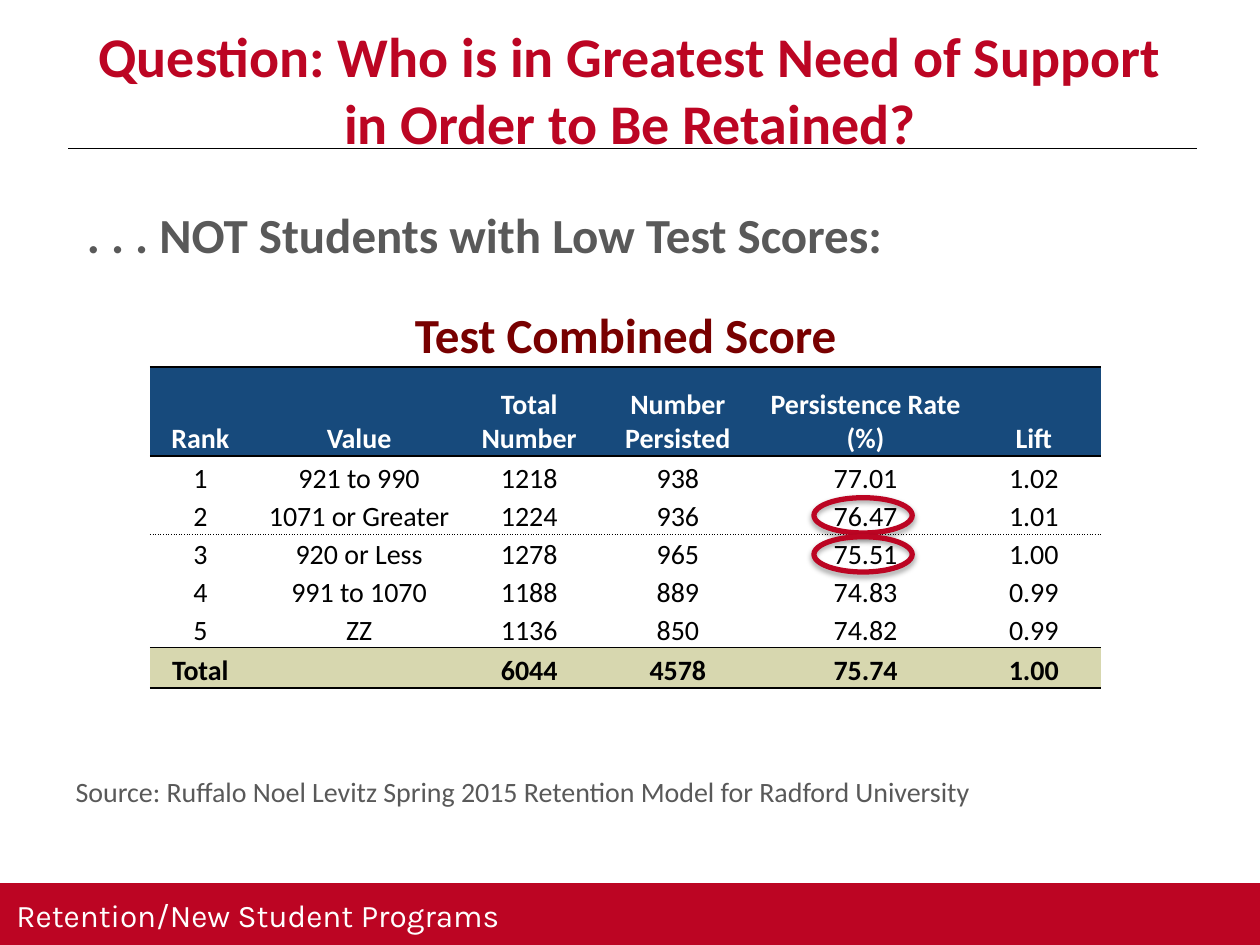
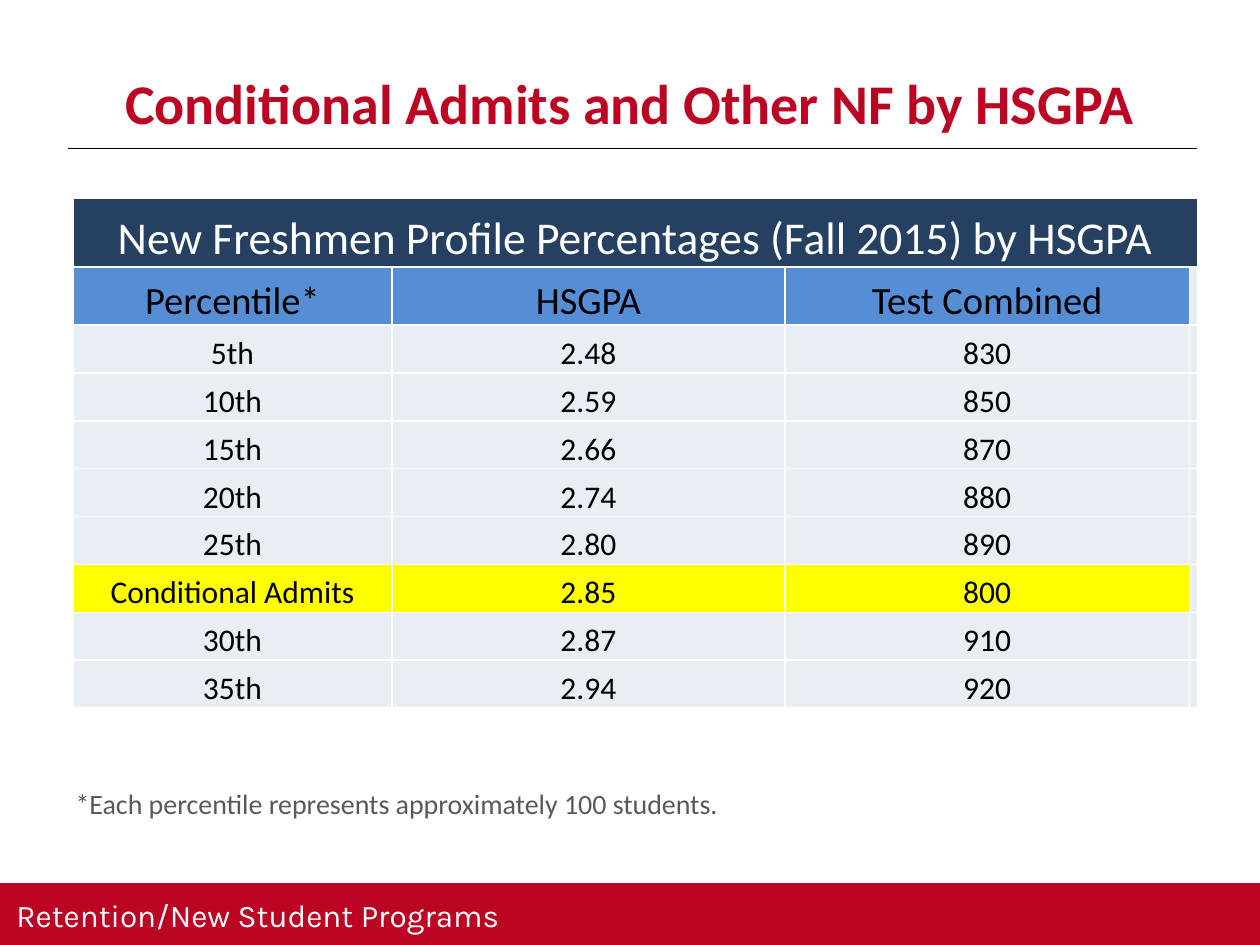
from lxml.etree import SubElement
from pptx import Presentation
from pptx.dml.color import RGBColor
from pptx.enum.shapes import MSO_CONNECTOR, MSO_SHAPE
from pptx.enum.text import MSO_ANCHOR, MSO_AUTO_SIZE, PP_ALIGN
from pptx.oxml import parse_xml
from pptx.oxml.ns import nsdecls, qn
from pptx.util import Inches, Pt

COLORS = {
    "red": "BC0523", "maroon": "780000", "gray": "595959",
    "black": "000000", "white": "FFFFFF", "navy": "174A7C",
    "olive": "D7D7AF", "midnight": "254061", "blue": "558ED5",
    "pale": "E9EDF4", "yellow": "FFFF00",
}
FONT, FOOTER_FONT = "Calibri", "Karla"
COMPARISON_LAYOUT = 4  # a title and four text placeholders
SIDES = ("L", "R", "T", "B")


def rgb(name):
    return RGBColor.from_string(COLORS[name])


class Deck:
    def __init__(self):
        self.prs = Presentation()
        self.prs.slide_width, self.prs.slide_height = Inches(10), Inches(7.5)

    def start(self, title, top):
        """Open a slide with its title, rule and footer band."""
        self.s = self.prs.slides.add_slide(self.prs.slide_layouts[COMPARISON_LAYOUT])
        self.free = [ph for ph in self.s.placeholders if ph.placeholder_format.idx]
        self.rule_and_band()
        self.fill_text(self.s.shapes.title, title, (0.5, top, 9, 1.41 - top), 32,
                       "red", bold=True, align=PP_ALIGN.CENTER, margin_top=0.07)
        self.body("Retention/New Student Programs", (0.03, 7.06, 4.05, 0.44), 18,
                  "white", font=FOOTER_FONT)

    def finish(self):
        for ph in self.free:
            ph.element.getparent().remove(ph.element)

    def rule_and_band(self):
        rule = self.s.shapes.add_connector(MSO_CONNECTOR.STRAIGHT, Inches(0.54),
                                           Inches(1.18), Inches(9.5), Inches(1.18))
        rule.line.color.rgb = rgb("black")
        rule.line.width = Pt(0.75)
        SubElement(rule.element.spPr, qn("a:effectLst"))
        band = self.s.shapes.add_shape(MSO_SHAPE.RECTANGLE, 0, Inches(7.01),
                                       Inches(10), Inches(0.49))
        band.shadow.inherit = False
        band.fill.solid()
        band.fill.fore_color.rgb = rgb("red")
        band.line.fill.background()
        # Both lie behind the placeholders
        for sp in (band, rule):
            self.s.shapes.element.insert(2, sp.element)

    def run(self, p, text, size, color, bold=False, font=FONT):
        r = p.add_run()
        r.text = text
        r.font.size, r.font.bold, r.font.name = Pt(size), bold, font
        r.font.color.rgb = rgb(color)

    def fill_text(self, sp, text, box, size, color, bold=False, font=FONT,
                  align=PP_ALIGN.LEFT, margin_left=0.1, margin_top=0.05):
        sp.left, sp.top, sp.width, sp.height = (Inches(v) for v in box)
        tf = sp.text_frame
        tf.word_wrap, tf.auto_size = True, MSO_AUTO_SIZE.NONE
        tf.vertical_anchor = MSO_ANCHOR.TOP
        tf.margin_left, tf.margin_top = Inches(margin_left), Inches(margin_top)
        p = tf.paragraphs[0]
        pPr = p._p.get_or_add_pPr()
        pPr.set("marL", "0")
        pPr.set("indent", "0")
        SubElement(pPr, qn("a:buNone"))
        p.alignment, p.space_before = align, Pt(0)
        self.run(p, text, size, color, bold, font)

    def body(self, text, box, size, color, **style):
        self.fill_text(self.free.pop(0), text, box, size, color, **style)

    def ring(self, left, top, width, height):
        sp = self.s.shapes.add_shape(MSO_SHAPE.OVAL, Inches(left), Inches(top),
                                     Inches(width), Inches(height))
        sp.fill.background()
        sp.line.color.rgb = rgb("red")
        sp.line.width = Pt(3)
        sp.shadow.inherit = False
        sp.element.spPr.find(qn("a:effectLst")).append(parse_xml(
            f'<a:outerShdw {nsdecls("a")} blurRad="{Pt(3.1)}" dist="{Pt(1.8)}" '
            f'dir="5400000" rotWithShape="0"><a:srgbClr val="{COLORS["black"]}">'
            '<a:alpha val="35000"/></a:srgbClr></a:outerShdw>'))

    def table(self, left, top, cols, heights, rows, look, margins):
        """look(row, col) gives size, colour, bold, fill and borders by side."""
        tbl = self.s.shapes.add_table(len(rows), len(cols), Inches(left), Inches(top),
                                      Inches(sum(cols)), Inches(sum(heights))).table
        tbl.first_row = tbl.horz_banding = False
        for col, width in zip(tbl.columns, cols):
            col.width = Inches(width)
        for row, height in zip(tbl.rows, heights):
            row.height = Inches(height)
        tbl.cell(0, 0).merge(tbl.cell(0, len(cols) - 1))
        for i, texts in enumerate(rows):
            for j in range(len(cols)):
                text = texts[j] if j < len(texts) else ""
                self.cell(tbl.cell(i, j), text, margins, *look(i, j))

    def cell(self, cell, text, margins, size, color, bold, fill, borders):
        (cell.margin_left, cell.margin_top,
         cell.margin_right, cell.margin_bottom) = (Inches(m) for m in margins)
        cell.vertical_anchor = MSO_ANCHOR.BOTTOM
        if fill:
            cell.fill.solid()
            cell.fill.fore_color.rgb = rgb(fill)
        else:
            cell.fill.background()
        p = cell.text_frame.paragraphs[0]
        p.alignment = PP_ALIGN.CENTER
        if text:
            self.run(p, text, size, color, bold)
        tcPr = cell._tc.get_or_add_tcPr()
        for i, side in enumerate(SIDES):
            tcPr.insert(i, self.border(side, *borders.get(side, (None, 0))))

    def border(self, side, color, width, dash="solid"):
        paint = "<a:noFill/>"
        if color:
            paint = (f'<a:solidFill><a:srgbClr val="{COLORS[color]}"/></a:solidFill>'
                     f'<a:prstDash val="{dash}"/>')
        return parse_xml(f'<a:ln{side} {nsdecls("a")} w="{Pt(width)}">{paint}</a:ln{side}>')


# Table looks
HEAVY, THIN, DOTTED = ("black", 1.5), ("black", 0.5), ("black", 0.5, "sysDot")
SCORE_LINES = [HEAVY, HEAVY, None, DOTTED, None, None, THIN, HEAVY]  # below each row


def score_look(row, col):
    borders = {}
    if SCORE_LINES[row]:
        borders["B"] = SCORE_LINES[row]
    if row and SCORE_LINES[row - 1]:
        borders["T"] = SCORE_LINES[row - 1]
    if row == 0:
        return 28, "maroon", True, None, borders
    if row == 1:
        return 16, "white", True, "navy", borders
    total = row == len(SCORE_LINES) - 1
    return 16, "black", total, "olive" if total else None, borders


def gpa_look(row, col):
    borders = dict.fromkeys(SIDES, ("white", 1))
    if row == 0:
        return 26, "white", False, "midnight", borders
    fill = "pale"
    if col < 3:
        fill = {1: "blue", 7: "yellow"}.get(row, "pale")
    return 22 if row == 1 else 18, "black", False, fill, borders


SCORE_ROWS = [
    ["Test Combined Score"],
    ["Rank", "Value", "Total Number", "Number Persisted", "Persistence Rate (%)", "Lift"],
    ["1", "921 to 990", "1218", "938", "77.01", "1.02"],
    ["2", "1071 or Greater", "1224", "936", "76.47", "1.01"],
    ["3", "920 or Less", "1278", "965", "75.51", "1.00"],
    ["4", "991 to 1070", "1188", "889", "74.83", "0.99"],
    ["5", "ZZ", "1136", "850", "74.82", "0.99"],
    ["Total", "", "6044", "4578", "75.74", "1.00"],
]
GPA_ROWS = [
    ["New Freshmen Profile Percentages (Fall 2015) by HSGPA"],
    ["Percentile*", "HSGPA", "Test Combined"],
    ["5th", "2.48", "830"],
    ["10th", "2.59", "850"],
    ["15th", "2.66", "870"],
    ["20th", "2.74", "880"],
    ["25th", "2.80", "890"],
    ["Conditional Admits", "2.85", "800"],
    ["30th", "2.87", "910"],
    ["35th", "2.94", "920"],
]


def main():
    deck = Deck()

    # Slide 1: persistence by test score
    deck.start("Question: Who is in Greatest Need of Support in Order to Be Retained?", 0.1)
    deck.body(". . . NOT Students with Low Test Scores:", (0.5, 1.57, 9, 1.67), 28,
              "gray", bold=True, margin_left=0.19)
    deck.body("Source: Ruffalo Noel Levitz Spring 2015 Retention Model for Radford University",
              (0.5, 6.1, 9, 0.44), 16, "gray")
    deck.table(1.19, 2.43, [0.8, 1.72, 0.98, 1.38, 1.6, 1.07],
               [0.48, 0.71, 0.32] + [0.3] * 4 + [0.32], SCORE_ROWS, score_look,
               (0, 0, 0, 0))
    for top in (3.95, 4.26):
        deck.ring(6.46, top, 0.78, 0.28)
    deck.finish()

    # Slide 2: freshman profile by HSGPA
    deck.start("Conditional Admits and Other NF by HSGPA", 0.47)
    deck.body("*Each percentile represents approximately 100 students.",
              (0.5, 6.19, 9, 0.43), 16, "gray")
    deck.table(0.58, 1.57, [2.53, 3.12, 3.21, 0.07], [0.55, 0.46] + [0.38] * 8,
               GPA_ROWS, gpa_look, (0.01, 0.01, 0.01, 0))
    deck.finish()

    deck.prs.save("out.pptx")


if __name__ == "__main__":
    main()
